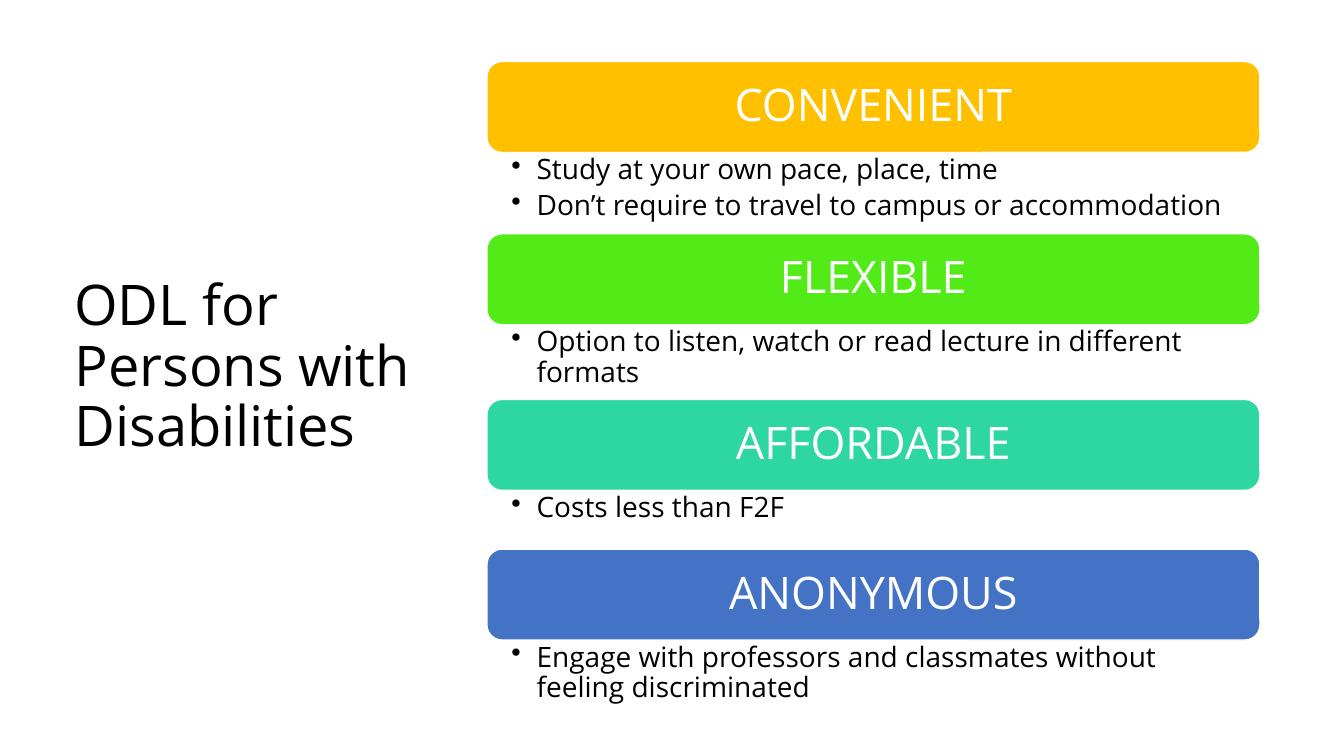
from dataclasses import dataclass

import pptx
import pptx.dml.color
import pptx.enum.shapes
import pptx.enum.text
import pptx.oxml
import pptx.oxml.ns
import pptx.util
from pptx.util import Pt


@dataclass(frozen=True)
class Theme:
    """Colours, font and type sizes of the slide."""
    font: str = "Open Sans"
    ink: str = "000000"
    paper: str = "FFFFFF"
    amber: str = "FFC000"
    green: str = "53EB17"
    teal: str = "2ED7A1"
    blue: str = "4472C4"
    title_size: int = 40
    header_size: int = 32
    bullet_size: int = 20


THEME = Theme()
LEFT, TOP, WIDTH, HEADER_HEIGHT = 347.8, 43.9, 552.2, 65
BENEFITS = [
    ("CONVENIENT", THEME.amber, 58.1,
     ["Study at your own pace, place, time",
      "Don’t require to travel to campus or accommodation"]),
    ("FLEXIBLE", THEME.green, 53.3,
     ["Option to listen, watch or read lecture in different formats"]),
    ("AFFORDABLE", THEME.teal, 41.9, ["Costs less than F2F"]),
    ("ANONYMOUS", THEME.blue, 53.3,
     ["Engage with professors and classmates without feeling discriminated"]),
]


def rgb(code):
    """Turn a hex code into a colour."""
    return pptx.dml.color.RGBColor.from_string(code)


def add_span(para, text, size, color):
    """Add one formatted run with the slide's line spacing."""
    para.line_spacing = 0.9
    span = para.add_run()
    span.text = text
    span.font.name = THEME.font
    span.font.size = Pt(size)
    span.font.color.rgb = rgb(color)


def set_frame(frame, anchor, left, top, right, bottom):
    """Set wrapping, anchor and insets of a text frame."""
    frame.word_wrap = True
    frame.vertical_anchor = anchor
    frame.margin_left, frame.margin_top = Pt(left), Pt(top)
    frame.margin_right, frame.margin_bottom = Pt(right), Pt(bottom)


def add_title(page, text):
    """Place and fill the title placeholder."""
    box = page.shapes.title
    box.left, box.top, box.width, box.height = Pt(46), Pt(22.3), Pt(275), Pt(481)
    set_frame(box.text_frame, pptx.enum.text.MSO_ANCHOR.MIDDLE, 7.2, 3.6, 7.2, 3.6)
    para = box.text_frame.paragraphs[0]
    para.alignment = pptx.enum.text.PP_ALIGN.LEFT
    add_span(para, text, THEME.title_size, THEME.ink)


def add_header(page, top, text, color):
    """Draw a rounded bar with its centred heading."""
    box = page.shapes.add_shape(pptx.enum.shapes.MSO_SHAPE.ROUNDED_RECTANGLE,
                                Pt(LEFT), Pt(top), Pt(WIDTH), Pt(HEADER_HEIGHT))
    box.shadow.inherit = False
    box.fill.solid()
    box.fill.fore_color.rgb = rgb(color)
    box.line.color.rgb = rgb(THEME.paper)
    box.line.width = Pt(1)
    set_frame(box.text_frame, pptx.enum.text.MSO_ANCHOR.MIDDLE, 9.6, 9.6, 9.6, 9.6)
    para = box.text_frame.paragraphs[0]
    para.alignment = pptx.enum.text.PP_ALIGN.CENTER
    add_span(para, text, THEME.header_size, THEME.paper)


def add_bullets(page, top, height, lines):
    """Write a bulleted list under a bar."""
    box = page.shapes.add_textbox(Pt(LEFT), Pt(top), Pt(WIDTH), Pt(height))
    frame = box.text_frame
    set_frame(frame, pptx.enum.text.MSO_ANCHOR.TOP, 17.5, 2, 11.5, 2)
    for index, line in enumerate(lines):
        para = frame.add_paragraph() if index else frame.paragraphs[0]
        para.level = 1
        para.space_after = Pt(4)
        properties = para._p.get_or_add_pPr()
        properties.set("marL", str(Pt(18)))
        properties.set("indent", str(-Pt(18)))
        bullet = pptx.oxml.parse_xml(
            f'<a:buChar {pptx.oxml.ns.nsdecls("a")} char="•"/>')
        properties.append(bullet)
        add_span(para, line, THEME.bullet_size, THEME.ink)


def main():
    """Build and save the slide."""
    deck = pptx.Presentation()
    deck.slide_width, deck.slide_height = Pt(960), Pt(540)
    page = deck.slides.add_slide(deck.slide_layouts[5])
    add_title(page, "ODL for Persons with Disabilities")
    top = TOP
    for heading, color, height, lines in BENEFITS:
        add_header(page, top, heading, color)
        add_bullets(page, top + HEADER_HEIGHT, height, lines)
        top += HEADER_HEIGHT + height
    deck.save("out.pptx")


if __name__ == "__main__":
    main()
